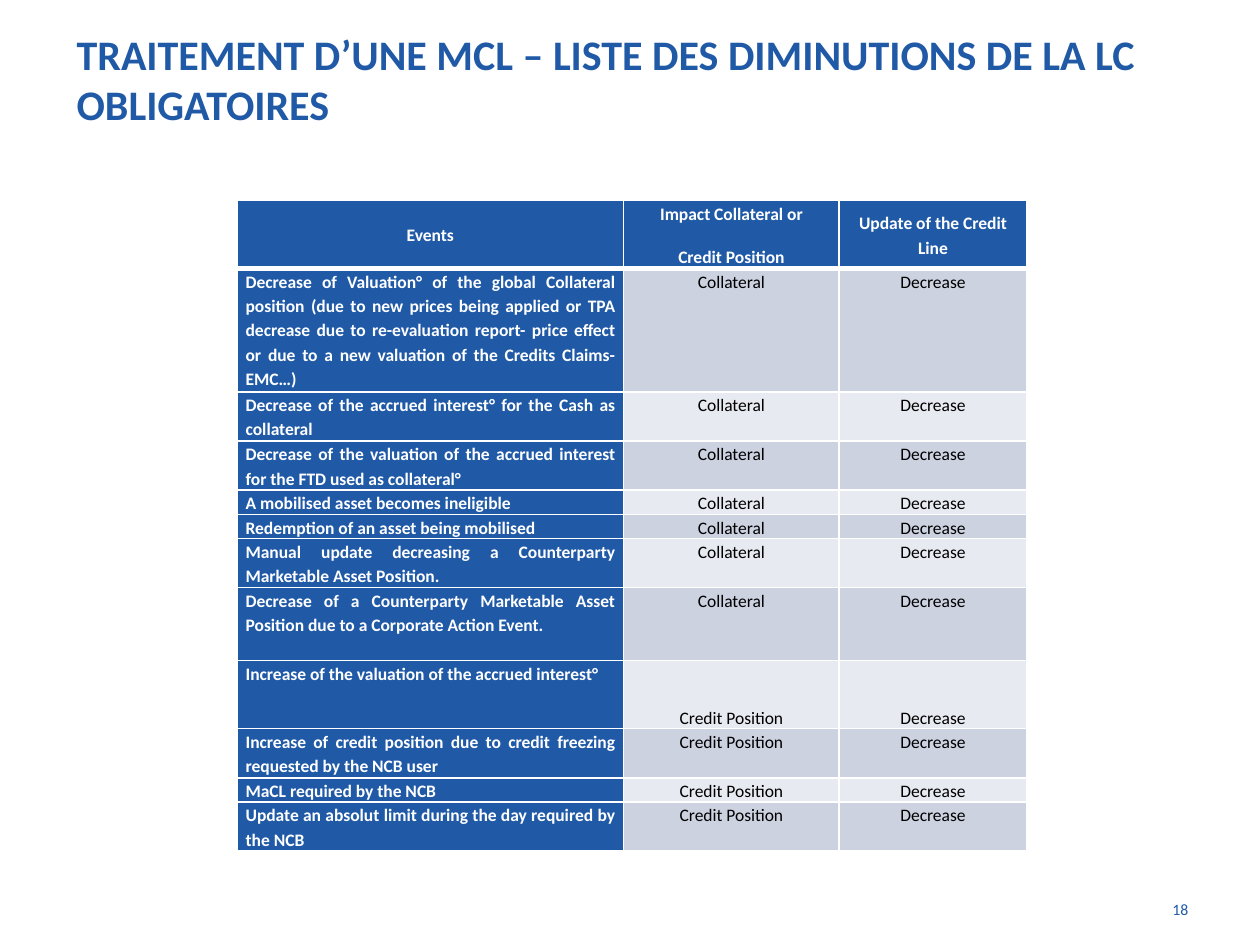
from pptx import Presentation
from pptx import util as u
from pptx.dml.color import RGBColor
from pptx.enum import text
from pptx.oxml import parse_xml
from pptx.oxml.ns import nsdecls

COLORS = {"blue": "205AA7", "white": "FFFFFF", "black": "000000",
          "odd": "CDD2E1", "even": "E8EAF1"}
FONT = "Calibri"
WIDTH, HEIGHT = 10, 7.5

TITLE = "TRAITEMENT D’UNE MCL – LISTE DES DIMINUTIONS DE LA LC OBLIGATOIRES"
PAGE = "18"
HEADINGS = ("Events", "Impact Collateral or\nCredit Position", "Update of the Credit Line")
COLLATERAL, CREDIT, DECREASE = "Collateral", "Credit Position", "Decrease"
EVENTS = [
    ("Decrease of Valuation° of the global Collateral position (due to new prices being "
     "applied or TPA decrease due to re-evaluation report- price effect or due to a new "
     "valuation of the Credits Claims-EMC…)", COLLATERAL, 0.98),
    ("Decrease of the accrued interest° for the Cash as collateral", COLLATERAL, 0.39),
    ("Decrease of the valuation of the accrued interest for the FTD used as collateral°",
     COLLATERAL, 0.39),
    ("A mobilised asset becomes ineligible", COLLATERAL, 0.19),
    ("Redemption of an asset being mobilised", COLLATERAL, 0.19),
    ("Manual update decreasing a Counterparty Marketable Asset Position.", COLLATERAL, 0.39),
    ("Decrease of a Counterparty Marketable Asset Position due to a Corporate Action Event.",
     COLLATERAL, 0.58),
    ("Increase of the valuation of the accrued interest°", CREDIT, 0.54),
    ("Increase of credit position due to credit freezing requested by the NCB user",
     CREDIT, 0.39),
    ("MaCL required by the NCB", CREDIT, 0.19),
    ("Update an absolut limit during the day required by the NCB", CREDIT, 0.39),
]
LOW_EVENT = "Increase of the valuation of the accrued interest°"
COLUMNS = (3.07, 1.71, 1.49)
HEADER_HEIGHT = 0.54
TABLE_LEFT, TABLE_TOP = 1.88, 1.59


def write(frame, words, size=10, color="black", bold=False, align="CENTER",
          spacing=None, before=0, after=0):
    for i, line in enumerate(words.split("\n")):
        paragraph = frame.add_paragraph() if i else frame.paragraphs[0]
        paragraph.alignment = getattr(text.PP_ALIGN, align)
        paragraph.line_spacing = spacing
        paragraph.space_before = u.Pt(before if i else 0)
        paragraph.space_after = u.Pt(after)
        run = paragraph.add_run()
        run.text = line
        run.font.name, run.font.size, run.font.bold = FONT, u.Pt(size), bold
        run.font.color.rgb = RGBColor.from_string(COLORS[color])


def add_label(slide, words, left, top, width, height, anchor="TOP", **style):
    frame = slide.shapes.add_textbox(*map(u.Inches, (left, top, width, height))).text_frame
    frame.word_wrap = True
    frame.vertical_anchor = getattr(text.MSO_ANCHOR, anchor)
    write(frame, words, **style)


def add_borders(cell, **widths):
    properties = cell._tc.get_or_add_tcPr()
    for i, side in enumerate("LRTB"):
        properties.insert(i, parse_xml(
            f'<a:ln{side} {nsdecls("a")} w="{u.Pt(widths.get(side, 1))}"><a:solidFill>'
            f'<a:srgbClr val="{COLORS["white"]}"/></a:solidFill></a:ln{side}>'))


def fill_cell(cell, words, fill, anchor="TOP", bottom=1, top=1, **style):
    cell.margin_left = cell.margin_right = u.Inches(0.07)
    cell.margin_top = cell.margin_bottom = 0
    cell.vertical_anchor = getattr(text.MSO_ANCHOR, anchor)
    cell.fill.solid()
    cell.fill.fore_color.rgb = RGBColor.from_string(COLORS[fill])
    add_borders(cell, B=bottom, T=top)
    write(cell.text_frame, words, spacing=1.15, before=3, after=8, **style)


def add_events(slide):
    heights = [HEADER_HEIGHT] + [height for _, _, height in EVENTS]
    table = slide.shapes.add_table(
        len(heights), len(COLUMNS), u.Inches(TABLE_LEFT), u.Inches(TABLE_TOP),
        u.Inches(sum(COLUMNS)), u.Inches(sum(heights))).table
    for column, width in zip(table.columns, COLUMNS):
        column.width = u.Inches(width)
    for row, height in zip(table.rows, heights):
        row.height = u.Inches(height)
    for c, heading in enumerate(HEADINGS):
        fill_cell(table.cell(0, c), heading, "blue", anchor="MIDDLE", bottom=3,
                  color="white", bold=True)
    for r, (event, impact, _) in enumerate(EVENTS, 1):
        top = 3 if r == 1 else 1
        fill_cell(table.cell(r, 0), event, "blue", top=top,
                  color="white", bold=True, align="JUSTIFY")
        for c, value in enumerate((impact, DECREASE), 1):
            fill_cell(table.cell(r, c), value, "odd" if r % 2 else "even", top=top,
                      anchor="BOTTOM" if event == LOW_EVENT else "TOP")


def main():
    deck = Presentation()
    deck.slide_width, deck.slide_height = u.Inches(WIDTH), u.Inches(HEIGHT)
    slide = deck.slides.add_slide(deck.slide_layouts[6])
    add_label(slide, TITLE, 0.51, 0, WIDTH * 0.9, HEIGHT / 6, anchor="MIDDLE",
              size=24, color="blue", bold=True, align="LEFT")
    add_events(slide)
    add_label(slide, PAGE, 8.94, 7.09, 0.59, 0.39, size=9, color="blue", align="RIGHT")
    deck.save("out.pptx")


if __name__ == "__main__":
    main()
